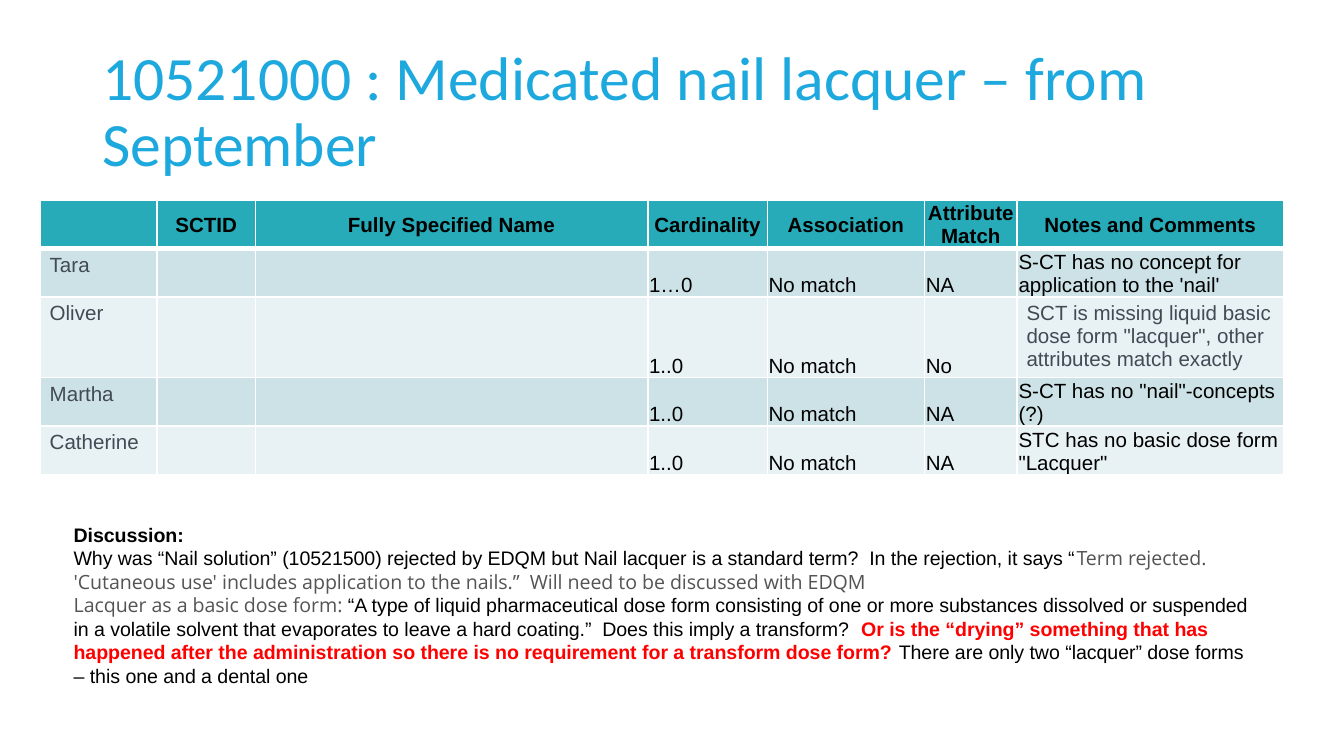
from dataclasses import dataclass

from lxml.etree import SubElement
from pptx import Presentation
from pptx.dml.color import RGBColor
from pptx.enum.text import MSO_ANCHOR, MSO_AUTO_SIZE, PP_ALIGN
from pptx.oxml.ns import qn
from pptx.util import Inches, Pt


@dataclass(frozen=True)
class Theme:
    title: str = "1DA8DE"
    header: str = "27ABB8"
    bands: tuple = ("CDE2E6", "E8F1F3")
    border: str = "FFFFFF"
    text: str = "000000"
    slate: str = "424A55"
    grey: str = "545454"
    alert: str = "FF0000"
    title_font: str = "Calibri"
    body_font: str = "Arial"
    quote_font: str = "Open Sans"
    title_size: float = 33
    table_size: float = 11
    discussion_size: float = 10.5


THEME = Theme()
TITLE = "10521000 : Medicated nail lacquer – from September"
HEADERS = ["", "SCTID", "Fully Specified Name", "Cardinality", "Association",
           "Attribute Match", "Notes and Comments"]
REVIEWS = [
    ["Tara", "", "", "1…0", "No match", "NA",
     "S-CT has no concept for application to the 'nail'"],
    ["Oliver", "", "", "1..0", "No match", "No",
     "SCT is missing liquid basic dose form \"lacquer\", other attributes match exactly"],
    ["Martha", "", "", "1..0", "No match", "NA", "S-CT has no \"nail\"-concepts (?)"],
    ["Catherine", "", "", "1..0", "No match", "NA",
     "STC has no basic dose form \"Lacquer\""],
]
COLUMN_WIDTHS = [0.87, 0.73, 2.92, 0.89, 1.17, 0.69, 1.98]
ROW_HEIGHTS = [0.36, 0.36, 0.6, 0.36, 0.36]
ROOMY_CELLS = {(row, 0) for row in range(1, 5)} | {(2, 6)}
ROOMY_MARGINS = (0.07, 0.04, 0.07, 0.04)
TIGHT_MARGINS = (0.01, 0.01, 0.01, 0)

STYLES = {
    "heading": (THEME.body_font, THEME.text, True),
    "plain": (THEME.body_font, THEME.text, False),
    "quote": (THEME.quote_font, THEME.grey, False),
    "alert": (THEME.body_font, THEME.alert, True),
}
DISCUSSION = [
    [("heading", "Discussion:")],
    [("plain", "Why was “Nail solution” (10521500) rejected by EDQM but Nail lacquer is "
               "a standard term?  In the rejection, it says “"),
     ("quote", "Term rejected. 'Cutaneous use' includes application to the nails.”  "
               "Will need to be discussed with EDQM")],
    [("quote", "Lacquer as a basic dose form: "),
     ("plain", "“A type of liquid pharmaceutical dose form consisting of one or more "
               "substances dissolved or suspended in a volatile solvent that evaporates "
               "to leave a hard coating.”  Does this imply a transform?  "),
     ("alert", "Or is the “drying” something that has happened after the administration "
               "so there is no requirement for a transform dose form? "),
     ("plain", "There are only two “lacquer” dose forms – this one and a dental one")],
]


def set_font(font, name, size, color, bold=False):
    font.name = name
    font.size = Pt(size)
    font.bold = bold
    font.color.rgb = RGBColor.from_string(color)


def set_margins(target, margins):
    (target.margin_left, target.margin_top,
     target.margin_right, target.margin_bottom) = map(Inches, margins)


def set_borders(cell, bottom):
    properties = cell._tc.get_or_add_tcPr()
    widths = {"lnL": 1, "lnR": 1, "lnT": 1, "lnB": bottom}
    for index, (tag, width) in enumerate(widths.items()):
        line = SubElement(properties, qn(f"a:{tag}"), w=str(Pt(width)))
        fill = SubElement(line, qn("a:solidFill"))
        SubElement(fill, qn("a:srgbClr"), val=THEME.border)
        properties.insert(index, line)


def add_title(page):
    title = page.shapes.title
    title.left, title.top, title.width, title.height = map(Inches, (0.69, 0.3, 8.62, 1.09))
    frame = title.text_frame
    frame.auto_size = MSO_AUTO_SIZE.NONE
    frame.word_wrap = True
    frame.vertical_anchor = MSO_ANCHOR.MIDDLE
    set_margins(frame, ROOMY_MARGINS)
    frame.text = TITLE
    para = frame.paragraphs[0]
    para.alignment = PP_ALIGN.LEFT
    para.line_spacing = 0.9
    set_font(para.font, THEME.title_font, THEME.title_size, THEME.title)


def format_cell(cell, row, column, text):
    header = row == 0
    roomy = (row, column) in ROOMY_CELLS
    cell.text = text
    cell.fill.solid()
    color = THEME.header if header else THEME.bands[(row - 1) % 2]
    cell.fill.fore_color.rgb = RGBColor.from_string(color)
    set_margins(cell, ROOMY_MARGINS if roomy else TIGHT_MARGINS)
    if header:
        cell.vertical_anchor = MSO_ANCHOR.MIDDLE
    else:
        cell.vertical_anchor = MSO_ANCHOR.TOP if roomy else MSO_ANCHOR.BOTTOM
    para = cell.text_frame.paragraphs[0]
    para.alignment = PP_ALIGN.CENTER if header else PP_ALIGN.LEFT
    set_font(para.font, THEME.body_font, THEME.table_size,
             THEME.slate if roomy else THEME.text, header)
    set_borders(cell, 3 if header else 1)


def add_review_table(page):
    rows = [HEADERS, *REVIEWS]
    table = page.shapes.add_table(
        len(rows), len(HEADERS), Inches(0.3), Inches(1.49),
        Inches(sum(COLUMN_WIDTHS)), Inches(sum(ROW_HEIGHTS))).table
    for column, width in zip(table.columns, COLUMN_WIDTHS):
        column.width = Inches(width)
    for row, height in zip(table.rows, ROW_HEIGHTS):
        row.height = Inches(height)
    for row, texts in enumerate(rows):
        for column, text in enumerate(texts):
            format_cell(table.cell(row, column), row, column, text)


def add_discussion(page):
    box = page.shapes.add_textbox(*map(Inches, (0.45, 3.84, 8.96, 1.69)))
    frame = box.text_frame
    frame.word_wrap = True
    frame.auto_size = MSO_AUTO_SIZE.SHAPE_TO_FIT_TEXT
    para = frame.paragraphs[0]
    for index, line in enumerate(DISCUSSION):
        if index:
            para.add_line_break()
        for style, text in line:
            span = para.add_run()
            span.text = text
            name, color, bold = STYLES[style]
            set_font(span.font, name, THEME.discussion_size, color, bold)


def main():
    deck = Presentation()
    deck.slide_width = Inches(10)
    deck.slide_height = deck.slide_width * 9 // 16
    page = deck.slides.add_slide(deck.slide_layouts.get_by_name("Title Only"))
    add_title(page)
    add_review_table(page)
    add_discussion(page)
    deck.save("out.pptx")


if __name__ == "__main__":
    main()
